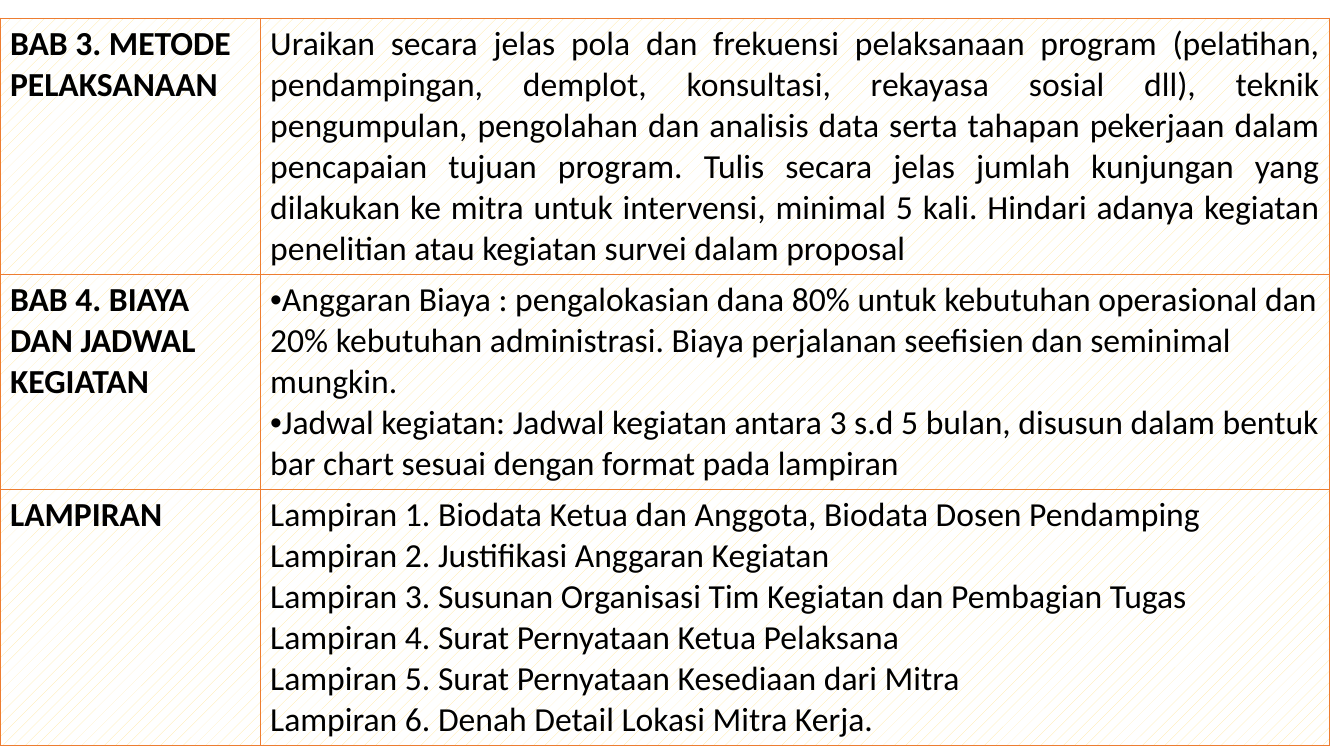
from lxml import etree
from pptx import Presentation
from pptx import util as u
from pptx.dml.color import RGBColor
from pptx.enum import dml, text
from pptx.oxml import ns

THEME = {
    "font": "Calibri", "size": u.Pt(24), "ink": RGBColor(0, 0, 0),
    "tint": RGBColor(0xFF, 0xE6, 0x99), "back": RGBColor(0xFF, 0xFF, 0xFF),
    "edge": "ED7D31", "line": u.Pt(1),
}
COLS = [2.58, 10.61]
INDENT = u.Inches(0.31)

# Each row: height, heading, style of the body, body paragraphs
ROWS = [
    (2.44, "BAB 3. METODE PELAKSANAAN", "justify", [
        "Uraikan secara jelas pola dan frekuensi pelaksanaan program (pelatihan, "
        "pendampingan, demplot, konsultasi, rekayasa sosial dll), teknik "
        "pengumpulan, pengolahan dan analisis data serta tahapan pekerjaan dalam "
        "pencapaian tujuan program. Tulis secara jelas jumlah kunjungan yang "
        "dilakukan ke mitra untuk intervensi, minimal 5 kali. Hindari adanya "
        "kegiatan penelitian atau kegiatan survei dalam proposal"]),
    (2.05, "BAB 4. BIAYA DAN JADWAL KEGIATAN", "bullet", [
        "Anggaran Biaya : pengalokasian dana 80% untuk kebutuhan operasional dan "
        "20% kebutuhan administrasi. Biaya perjalanan seefisien dan seminimal "
        "mungkin.",
        "Jadwal kegiatan: Jadwal kegiatan antara 3 s.d 5 bulan, disusun dalam "
        "bentuk bar chart sesuai dengan format pada lampiran"]),
    (2.44, "LAMPIRAN", "plain", [
        f"Lampiran {num}. {item}" for num, item in enumerate([
            "Biodata Ketua dan Anggota, Biodata Dosen Pendamping",
            "Justifikasi Anggaran Kegiatan",
            "Susunan Organisasi Tim Kegiatan dan Pembagian Tugas",
            "Surat Pernyataan Ketua Pelaksana",
            "Surat Pernyataan Kesediaan dari Mitra",
            "Denah Detail Lokasi Mitra Kerja."], 1)]),
]


def apply(target, values):
    for name, value in values.items():
        setattr(target, name, value)


def add_node(parent, tag, **attrs):
    node = etree.SubElement(parent, ns.qn(tag))
    for name, value in attrs.items():
        node.set(name, str(value))
    return node


def add_bullet(para):
    props = para._p.get_or_add_pPr()
    apply(props, {"marL": INDENT, "indent": -INDENT})
    add_node(props, "a:buFont", typeface="Arial")
    add_node(props, "a:buChar", char="•")


def paint_cell(cell):
    # Borders come before the fill in the cell properties
    props = cell._tc.get_or_add_tcPr()
    for side in "LRTB":
        line = add_node(props, f"a:ln{side}", w=THEME["line"])
        fill = add_node(line, "a:solidFill")
        add_node(fill, "a:srgbClr", val=THEME["edge"])
    cell.fill.patterned()
    cell.fill.pattern = dml.MSO_PATTERN.PERCENT_10
    cell.fill.fore_color.rgb = THEME["tint"]
    cell.fill.back_color.rgb = THEME["back"]


def write_cell(cell, lines, style="plain", bold=False):
    cell.text = "\n".join(lines)
    for para in cell.text_frame.paragraphs:
        if style == "justify":
            para.alignment = text.PP_ALIGN.JUSTIFY
        elif style == "bullet":
            add_bullet(para)
        font = para.runs[0].font
        apply(font, {"name": THEME["font"], "size": THEME["size"], "bold": bold})
        font.color.rgb = THEME["ink"]
    paint_cell(cell)


def add_guide(slide):
    high = sum(row[0] for row in ROWS)
    frame = slide.shapes.add_table(
        len(ROWS), len(COLS), u.Inches(0), u.Inches(0.18),
        u.Inches(sum(COLS)), u.Inches(high))
    table = frame.table
    apply(table, {"first_row": False, "horz_banding": False})
    for col, width in zip(table.columns, COLS):
        col.width = u.Inches(width)
    for row, (height, head, style, lines) in zip(table.rows, ROWS):
        row.height = u.Inches(height)
        write_cell(row.cells[0], [head], bold=True)
        write_cell(row.cells[1], lines, style)


def main():
    deck = Presentation()
    apply(deck, {"slide_width": u.Inches(13.33), "slide_height": u.Inches(7.5)})
    slide = deck.slides.add_slide(deck.slide_layouts[6])
    add_guide(slide)
    deck.save("out.pptx")


if __name__ == "__main__":
    main()
